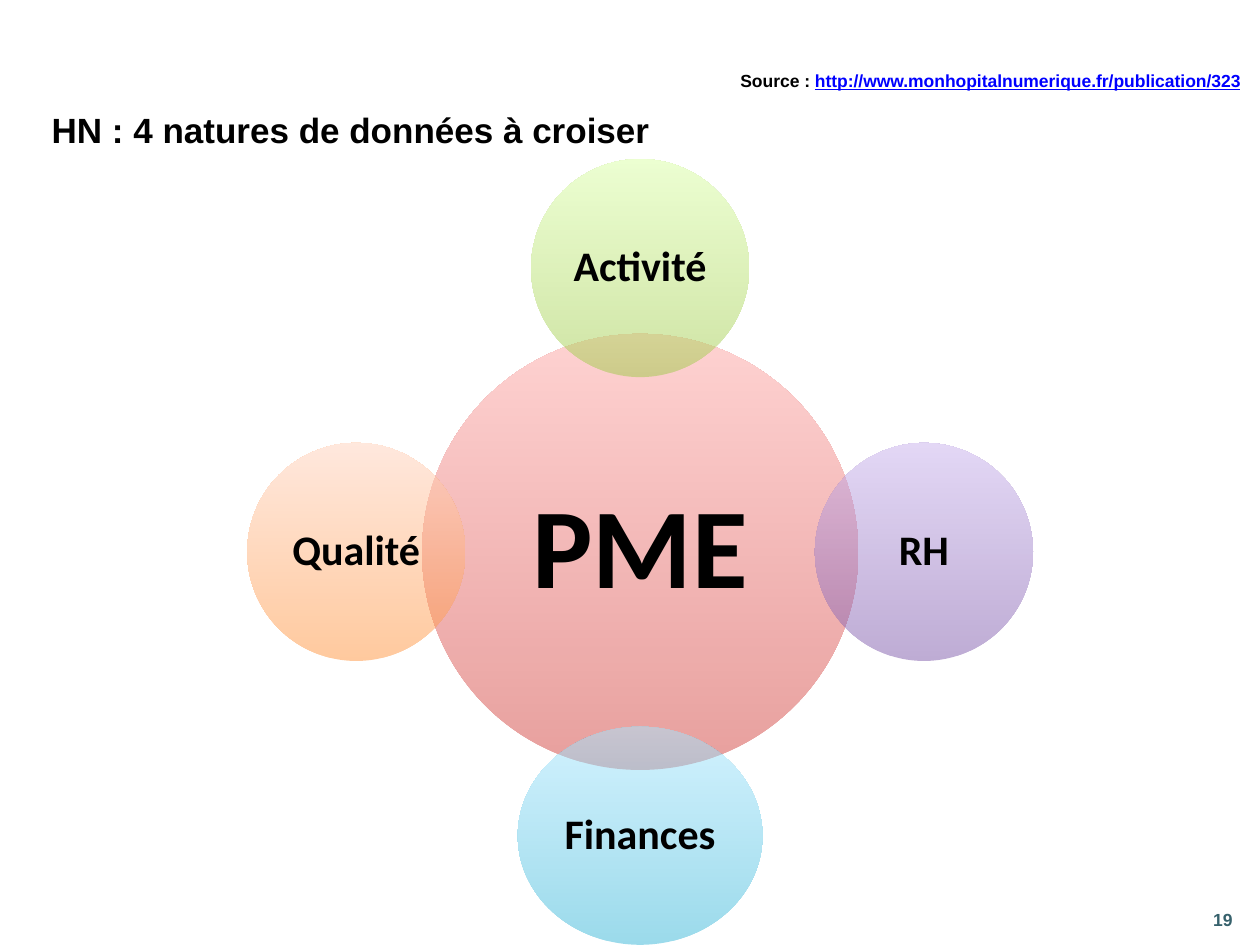
"""Build the slide on the four kinds of data that meet in the PME."""
from lxml.etree import SubElement
from pptx import Presentation
from pptx.dml.color import RGBColor
from pptx.enum.shapes import MSO_SHAPE
from pptx.enum.text import MSO_ANCHOR, PP_ALIGN
from pptx.oxml.ns import qn
from pptx.util import Pt

COLORS = {
    "text": "000000", "link": "0000FF", "number": "36616C",
    "pme": ("D1403C", "FFA6A5"), "activite": ("A0CA4A", "DAFFA5"),
    "rh": ("7F5BAB", "C8B0ED"), "finances": ("39B7D8", "A7E6FF"),
    "qualite": ("FF953E", "FFD2BD"),
}
CENTER_X, CENTER_Y, ORBIT = 365.8, 315.4, 162.2
HUB, SATELLITE = 249.2, 124.6
SATELLITES = [
    ("Activité", "activite", 0, -1, SATELLITE),
    ("RH", "rh", 1, 0, SATELLITE),
    ("Finances", "finances", 0, 1, 139.8),
    ("Qualité", "qualite", -1, 0, SATELLITE),
]


def add_run(p, text, size, font="Arial", color="text", **extra):
    r = p.add_run()
    r.text = text
    formats = {"name": font, "size": Pt(size), "bold": True, **extra}
    for name, value in formats.items():
        setattr(r.font, name, value)
    r.font.color.rgb = RGBColor.from_string(COLORS[color])


def set_frame(tf, **formats):
    for name, value in formats.items():
        setattr(tf, name, value)
    return tf.paragraphs[0]


def set_title(s, text):
    title = s.shapes.title
    title.left, title.top, title.width, title.height = Pt(22.3), Pt(56.2), Pt(687.6), Pt(35.3)
    p = set_frame(title.text_frame, vertical_anchor=MSO_ANCHOR.MIDDLE, word_wrap=True)
    p.alignment = PP_ALIGN.LEFT
    add_run(p, text, 20)


def add_text(s, x, y, w, h, parts, **formats):
    box = s.shapes.add_textbox(Pt(x), Pt(y), Pt(w), Pt(h))
    p = set_frame(box.text_frame, **formats)
    for text, extra in parts:
        add_run(p, text, 10, **extra)


def fill_gradient(sp, colors):
    sp.fill.gradient()
    sp.fill.gradient_angle = 90
    for stop, color, position in zip(sp.fill.gradient_stops, colors, (0, 1)):
        stop.color.rgb = RGBColor.from_string(color)
        stop.position = position
    for clr in sp.fill._xPr.iter(qn("a:srgbClr")):
        SubElement(clr, qn("a:alpha"), val="50000")


def add_circle(s, text, key, cx, cy, w, h, size, inset):
    sp = s.shapes.add_shape(MSO_SHAPE.OVAL, Pt(cx - w / 2), Pt(cy - h / 2), Pt(w), Pt(h))
    sp.shadow.inherit = False
    sp.line.fill.background()
    fill_gradient(sp, COLORS[key])
    margins = {f"margin_{side}": Pt(inset) for side in ("left", "top", "right", "bottom")}
    p = set_frame(sp.text_frame, vertical_anchor=MSO_ANCHOR.MIDDLE, word_wrap=True, **margins)
    p.alignment = PP_ALIGN.CENTER
    p.line_spacing = 0.9
    add_run(p, text, size, font="Calibri")


def main():
    prs = Presentation()
    prs.slide_width, prs.slide_height = Pt(720), Pt(540)
    s = prs.slides.add_slide(prs.slide_layouts[5])
    set_title(s, "HN : 4 natures de données à croiser")
    add_circle(s, "PME", "pme", CENTER_X, CENTER_Y, HUB, HUB, 65, 6.5)
    for text, key, dx, dy, width in SATELLITES:
        add_circle(s, text, key, CENTER_X + dx * ORBIT, CENTER_Y + dy * ORBIT,
                   width, SATELLITE, 24, 2.4)
    source = [("Source : ", {}),
              ("http://www.monhopitalnumerique.fr/publication/323",
               {"color": "link", "underline": True})]
    add_text(s, 416, 36.7, 304, 19.4, source, word_wrap=False)
    add_text(s, 686.2, 511.2, 33.8, 28.8, [("19", {"color": "number"})],
             word_wrap=True, vertical_anchor=MSO_ANCHOR.MIDDLE)
    prs.save("out.pptx")


if __name__ == "__main__":
    main()
